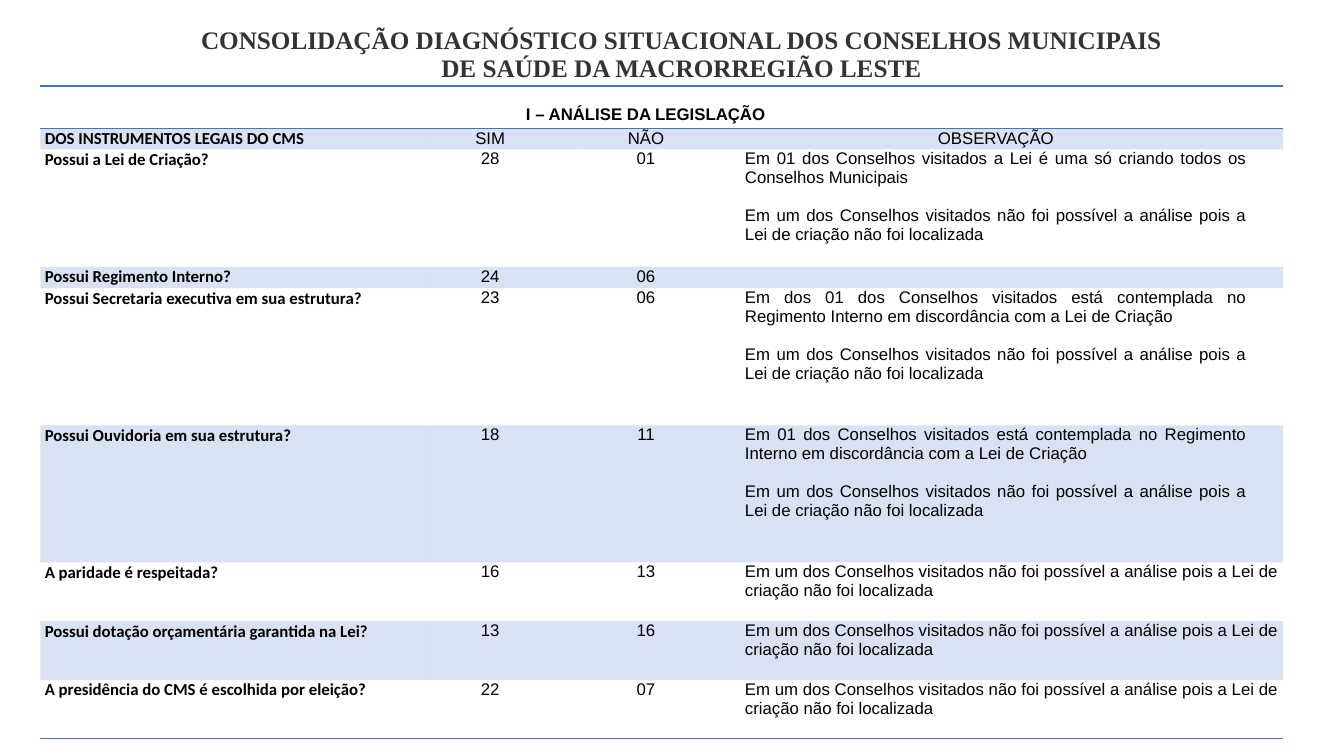
"""Build the slide on the legal instruments of the municipal health councils."""
from pptx import Presentation
from pptx import util as u
from pptx.dml.color import RGBColor
from pptx.enum import text
from pptx.oxml import parse_xml

Pt = u.Pt
NS = 'xmlns:a="http://schemas.openxmlformats.org/drawingml/2006/main"'
BLUE = "4472C4"
LEFT, MID, JUST = text.PP_ALIGN.LEFT, text.PP_ALIGN.CENTER, text.PP_ALIGN.JUSTIFY


def style(par, face, size, bold, align, color="000000"):
    par.alignment = align
    font = par.font
    font.name, font.size, font.bold = face, Pt(size), bold
    font.color.rgb = RGBColor.from_string(color)


def paint(cell, edges, shade):
    props = cell._tc.get_or_add_tcPr()
    for edge in edges:
        props.append(parse_xml(
            f'<a:{edge} {NS} w="{Pt(1)}"><a:solidFill><a:srgbClr val="{BLUE}"/>'
            f'</a:solidFill></a:{edge}>'))
    if shade:
        props.append(parse_xml(
            f'<a:solidFill {NS}><a:srgbClr val="{BLUE}"><a:alpha val="20000"/>'
            f'</a:srgbClr></a:solidFill>'))
    else:
        cell.fill.background()


deck = Presentation()
deck.slide_width, deck.slide_height = Pt(960), Pt(540)
slide = deck.slides.add_slide(deck.slide_layouts[6])

box = slide.shapes.add_textbox(Pt(125.3), Pt(20), Pt(722.9), Pt(40))
frame = box.text_frame
frame.word_wrap = True
frame.margin_top = frame.margin_bottom = 0
title = frame.paragraphs[0]
title.text = ("CONSOLIDAÇÃO DIAGNÓSTICO SITUACIONAL DOS CONSELHOS MUNICIPAIS "
              "DE SAÚDE DA MACRORREGIÃO LESTE")
title.line_spacing = 0.9
style(title, "Times New Roman", 18, True, MID, "333333")

lost = ("Em um dos Conselhos visitados não foi possível a análise pois a Lei de "
        "criação não foi localizada")
rule = "está contemplada no Regimento Interno em discordância com a Lei de Criação"
rows = [
    ("I – ANÁLISE DA LEGISLAÇÃO", "", "", []),
    ("DOS INSTRUMENTOS LEGAIS DO CMS", "SIM", "NÃO", ["OBSERVAÇÃO"]),
    ("Possui a Lei de Criação?", "28", "01",
     ["Em 01 dos Conselhos visitados a Lei é uma só criando todos os "
      "Conselhos Municipais", lost]),
    ("Possui Regimento Interno?", "24", "06", []),
    ("Possui Secretaria executiva em sua estrutura?", "23", "06",
     [f"Em dos 01 dos Conselhos visitados {rule}", lost]),
    ("Possui Ouvidoria em sua estrutura?", "18", "11",
     [f"Em 01 dos Conselhos visitados {rule}", lost]),
    ("A paridade é respeitada?", "16", "13", [lost]),
    ("Possui dotação orçamentária garantida na Lei?", "13", "16", [lost]),
    ("A presidência do CMS é escolhida por eleição?", "22", "07", [lost]),
]
wide = [277.7, 110.2, 112.3, 387.6]
high = [30.2, 15.2, 83.8, 15.2, 98, 98, 42, 42, 42]

shape = slide.shapes.add_table(len(rows), len(wide), Pt(28.8), Pt(61.4),
                               Pt(sum(wide)), Pt(sum(high)))
table = shape.table
table.first_row = table.horz_banding = False
table._tbl.tblPr[0].text = "{2D5ABB26-0587-4C30-8999-92F81FD0307C}"
for col, width in zip(table.columns, wide):
    col.width = Pt(width)
for row, height in zip(table.rows, high):
    row.height = Pt(height)
table.cell(0, 0).merge(table.cell(0, 3))

for r, (item, yes, no, notes) in enumerate(rows):
    edges = ["lnT", "lnB"] if r == 0 else ["lnB"] if r == len(rows) - 1 else []
    for c, lines in enumerate([[item], [yes], [no], notes]):
        cell = table.cell(r, c)
        cell.margin_left = Pt(3.2)
        cell.margin_right = Pt(3.2 if c == 0 < r or c == 3 and r > 5 else 26)
        cell.margin_top = Pt(13.8 if r == 0 else 0)
        cell.margin_bottom = 0
        if r == 1:
            cell.vertical_anchor = text.MSO_ANCHOR.MIDDLE
        cell.text = "\n".join(lines)
        first = c == 0 < r
        align = LEFT if first else JUST if c == 3 and r > 1 else MID
        for par in cell.text_frame.paragraphs:
            style(par, "Calibri" if first else "Arial", 12, c == 0, align)
        for par in cell.text_frame.paragraphs[:-1]:
            par.space_after = Pt(13.8)
        paint(cell, edges, r % 2 == 1)

deck.save("out.pptx")
